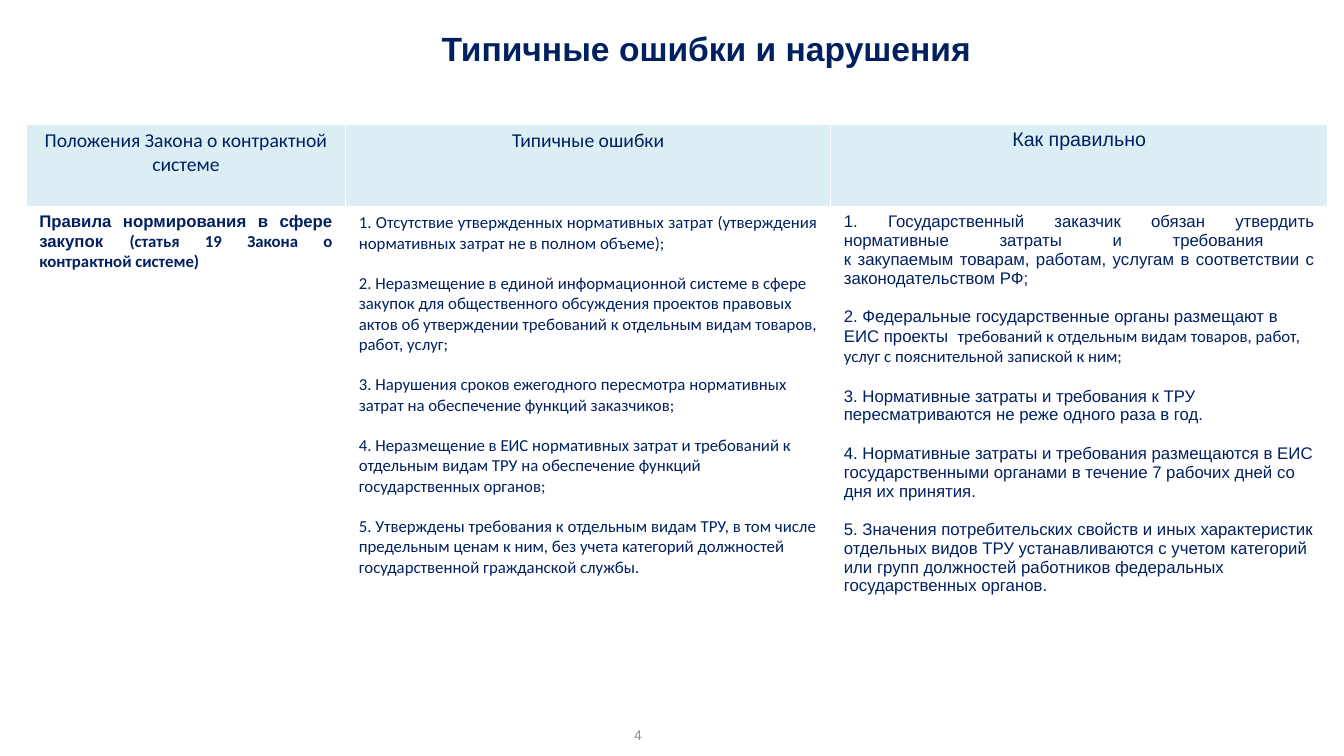
from lxml.etree import SubElement as Sub
from pptx import Presentation
from pptx.dml.color import RGBColor
from pptx.enum.text import MSO_ANCHOR as Anchor, PP_ALIGN as Align
from pptx.oxml.ns import qn
from pptx.util import Inches, Pt

NAVY = RGBColor(0x00, 0x20, 0x60)
PALE = RGBColor(0xDB, 0xEE, 0xF4)
GREY = RGBColor(0x8C, 0x8D, 0x9D)
WHITE = RGBColor(0xFF, 0xFF, 0xFF)

WIDTHS = [3.17, 4.81, 4.93]
HEIGHTS = [0.83, 4.1]
HEADS = [
    ("Положения Закона о контрактной системе", "Calibri"),
    ("Типичные ошибки", "Calibri"),
    ("Как правильно", "Arial"),
]
RULE = [
    ("Правила нормирования в сфере закупок ", "Arial"),
    ("(статья 19 Закона о контрактной системе)", "Calibri"),
]
ERRORS = [
    " Отсутствие утвержденных нормативных затрат (утверждения нормативных затрат не в полном объеме); ",
    "2. Неразмещение в единой информационной системе в сфере закупок для общественного обсуждения проектов правовых актов об утверждении требований к отдельным видам товаров, работ, услуг;",
    "3. Нарушения сроков ежегодного пересмотра нормативных затрат на обеспечение функций заказчиков;",
    "4. Неразмещение в ЕИС нормативных затрат и требований к отдельным видам ТРУ на обеспечение функций государственных органов;",
    "5. Утверждены требования к отдельным видам ТРУ, в том числе предельным ценам к ним, без учета категорий должностей государственной гражданской службы.",
]
FIXES = [
    " Государственный заказчик обязан утвердить нормативные затраты и требования \vк закупаемым товарам, работам, услугам в соответствии с законодательством РФ;",
    [
        ("2. Федеральные государственные органы размещают в ЕИС проекты  ", "Arial"),
        ("требований к отдельным видам товаров, работ, услуг с пояснительной запиской к ним;", "Calibri"),
    ],
    "3. Нормативные затраты и требования к ТРУ пересматриваются не реже одного раза в год.",
    "4. Нормативные затраты и требования размещаются в ЕИС государственными органами в течение 7 рабочих дней со дня их принятия.",
    "5. Значения потребительских свойств и иных характеристик отдельных видов ТРУ устанавливаются с учетом категорий или групп должностей работников федеральных государственных органов.",
]


def style(para, size, color=NAVY, bold=False, name=None, align=Align.LEFT):
    para.alignment = align
    font = para.font
    font.size = Pt(size)
    font.bold = bold
    font.color.rgb = color
    if name:
        font.name = name


def write(para, text, size, name=None, **look):
    if isinstance(text, str):
        para.text = text
    else:
        for part, face in text:
            run = para.add_run()
            run.text = part
            run.font.name = face
        name = None
    style(para, size, name=name, **look)


def number(para):
    props = para._p.get_or_add_pPr()
    props.set("marL", "0")
    props.set("indent", "0")
    Sub(props, qn("a:buFont"), typeface="+mj-lt")
    Sub(props, qn("a:buAutoNum"), type="arabicPeriod")


def border(cell, base):
    props = cell._tc.get_or_add_tcPr()
    for side, width in zip("LRTB", (1, 1, 1, base)):
        line = Sub(props, qn(f"a:ln{side}"), w=str(Pt(width)))
        fill = Sub(line, qn("a:solidFill"))
        Sub(fill, qn("a:srgbClr"), val=str(WHITE))


def add_label(slide, box, text, size, **look):
    frame = slide.shapes.add_textbox(*map(Inches, box)).text_frame
    frame.word_wrap = True
    frame.vertical_anchor = Anchor.MIDDLE
    write(frame.paragraphs[0], text, size, **look)


def fill_list(cell, items, name):
    frame = cell.text_frame
    for i, item in enumerate(items):
        para = frame.add_paragraph() if i else frame.paragraphs[0]
        if i == 0:
            number(para)
        else:
            para.space_before = Pt(14)
        write(para, item, 12, name, align=Align.LEFT if i else Align.JUSTIFY)


def add_grid(slide):
    box = map(Inches, (0.26, 1.23, sum(WIDTHS), sum(HEIGHTS)))
    table = slide.shapes.add_table(len(HEIGHTS), len(WIDTHS), *box).table
    table.horz_banding = False
    for col, width in zip(table.columns, WIDTHS):
        col.width = Inches(width)
    for row, height in zip(table.rows, HEIGHTS):
        row.height = Inches(height)
    for cell in table.iter_cells():
        cell.margin_left = cell.margin_right = Inches(0.13)
        cell.margin_top = cell.margin_bottom = Inches(0.05)
    for i, (text, name) in enumerate(HEADS):
        head, body = table.cell(0, i), table.cell(1, i)
        border(head, 3)
        head.fill.solid()
        head.fill.fore_color.rgb = PALE
        write(head.text_frame.paragraphs[0], text, 14, name, align=Align.CENTER)
        border(body, 1)
        body.fill.background()
    write(table.cell(1, 0).text_frame.paragraphs[0], RULE, 12, bold=True, align=Align.JUSTIFY)
    fill_list(table.cell(1, 1), ERRORS, "Calibri")
    fill_list(table.cell(1, 2), FIXES, "Arial")


def main():
    deck = Presentation()
    deck.slide_width = Inches(13.33)
    deck.slide_height = Inches(7.5)
    slide = deck.slides.add_slide(deck.slide_layouts[6])
    add_label(slide, (0.67, 0, 12.67, 0.96), "Типичные ошибки и нарушения", 24,
              name="Arial", bold=True, align=Align.CENTER)
    add_label(slide, (6.19, 7.17, 2.92, 0.25), "4", 10, name="Arial", color=GREY)
    add_grid(slide)
    deck.save("out.pptx")


if __name__ == "__main__":
    main()
